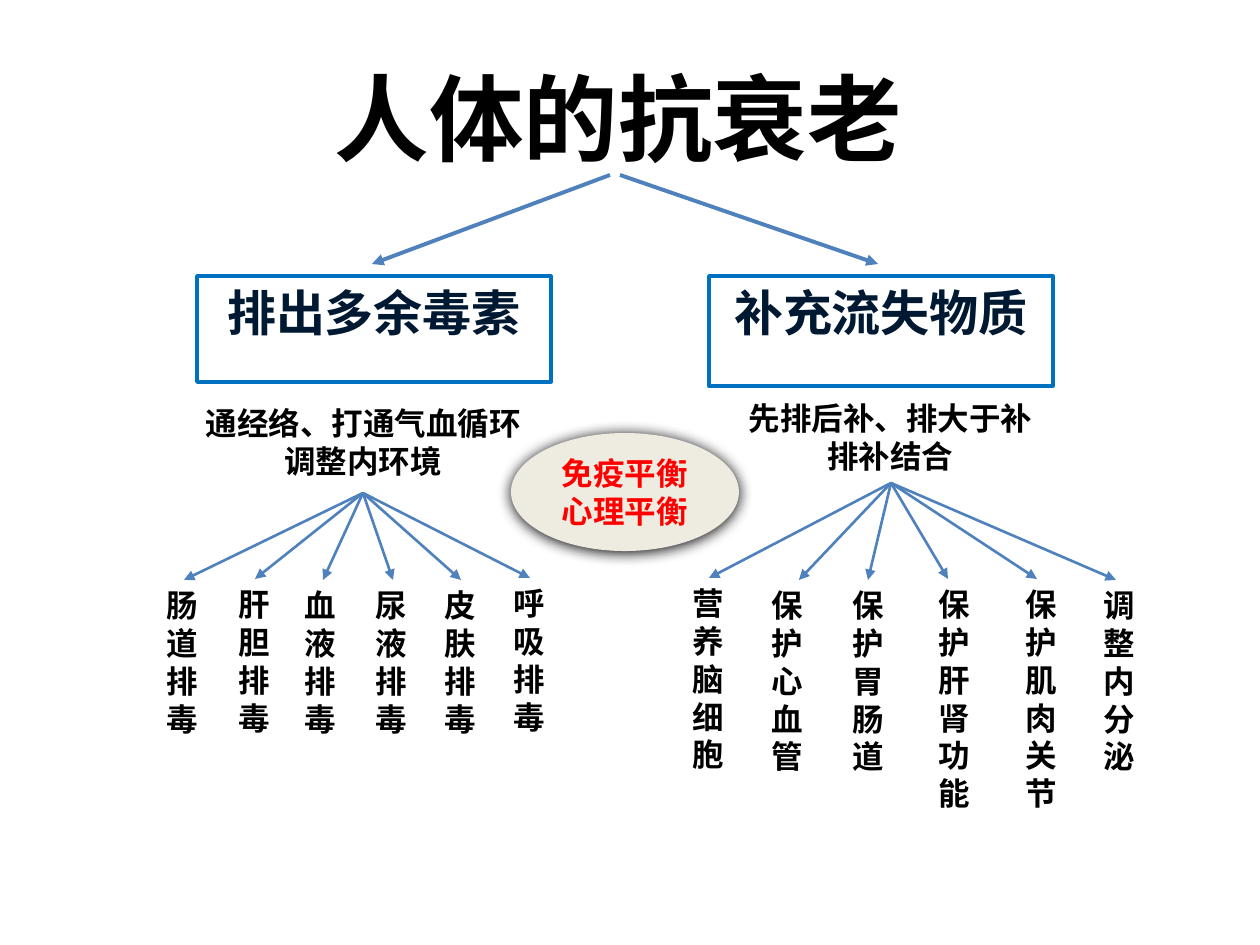
from dataclasses import dataclass

from lxml import etree
from pptx import Presentation
from pptx.dml.color import RGBColor
from pptx.enum.shapes import MSO_CONNECTOR, MSO_SHAPE
from pptx.enum.text import MSO_ANCHOR, PP_ALIGN
from pptx.oxml.ns import qn
from pptx.util import Emu, Pt

EMU_PER_PX = 914400 // 126
STRAIGHT = MSO_CONNECTOR.STRAIGHT
RECTANGLE, OVAL = MSO_SHAPE.RECTANGLE, MSO_SHAPE.OVAL
TOP, MIDDLE = MSO_ANCHOR.TOP, MSO_ANCHOR.MIDDLE
LEFT, CENTER = PP_ALIGN.LEFT, PP_ALIGN.CENTER

BLACK, RED, NAVY = "000000", "FF0000", "001932"
WHITE, CREAM, BORDER, ARROW = "FFFFFF", "EEECE1", "0070C0", "4F81BD"

BODY = {"name": "Arial", "size": Pt(18), "bold": True}
HEADING = {"name": "Calibri", "size": Pt(28), "bold": True}
TITLE = {"name": "Calibri", "size": Pt(54), "bold": True}

COLUMN_LINE, COLUMN_PADDING = 38, 14


@dataclass
class Box:
    left: int
    top: int
    width: int
    height: int


@dataclass
class Column:
    text: str
    left: int
    top: int
    width: int
    tip: int


@dataclass
class Branch:
    heading: str
    heading_box: Box
    summary: list[str]
    summary_box: Box
    origin: tuple[int, int]
    columns: list[Column]


BRANCHES = [
    Branch("排出多余毒素", Box(197, 276, 354, 106),
           ["通经络、打通气血循环 调整内环境"], Box(184, 398, 358, 126), (363, 493), [
               Column("肠道排毒", 154, 580, 59, 184),
               Column("肝胆排毒", 226, 579, 59, 255),
               Column("血液排毒", 292, 580, 59, 323),
               Column("尿液排毒", 363, 580, 59, 393),
               Column("皮肤排毒", 432, 580, 59, 461),
               Column("呼吸排毒", 501, 578, 59, 530)]),
    Branch("补充流失物质", Box(709, 276, 344, 110),
           ["先排后补、排大于补", "排补结合"], Box(689, 393, 403, 90), (891, 483), [
               Column("营养脑细胞", 680, 578, 59, 709),
               Column("保护心血管", 759, 580, 78, 799),
               Column("保护胃肠道", 840, 580, 81, 868),
               Column("保护肝肾功能", 926, 579, 69, 948),
               Column("保护肌肉关节", 1013, 579, 69, 1037),
               Column("调整内分泌", 1091, 580, 78, 1116)]),
]


def px(value: int) -> Emu:
    return Emu(value * EMU_PER_PX)


def colour(value: str) -> RGBColor:
    return RGBColor.from_string(value)


def bounds(box: Box) -> list[Emu]:
    return [px(value) for value in (box.left, box.top, box.width, box.height)]


def write(shape, lines: list[str], font: dict, hex_colour: str,
          alignment=CENTER, anchor=TOP, wrap: bool = True) -> None:
    frame = shape.text_frame
    frame.word_wrap = wrap
    frame.vertical_anchor = anchor
    for index, line in enumerate(lines):
        paragraph = frame.add_paragraph() if index else frame.paragraphs[0]
        paragraph.alignment = alignment
        run = paragraph.add_run()
        run.text = line
        for name, value in font.items():
            setattr(run.font, name, value)
        run.font.color.rgb = colour(hex_colour)


def add_text(slide, box: Box, lines: list[str], font: dict, **options):
    shape = slide.shapes.add_textbox(*bounds(box))
    write(shape, lines, font, BLACK, **options)
    return shape


def add_panel(slide, kind, box: Box, fill: str, border: str | None = None):
    shape = slide.shapes.add_shape(kind, *bounds(box))
    shape.shadow.inherit = False
    shape.fill.solid()
    shape.fill.fore_color.rgb = colour(fill)
    if border:
        shape.line.color.rgb = colour(border)
        shape.line.width = Pt(2)
    else:
        shape.line.fill.background()
    return shape


def add_shadow(shape) -> None:
    effects = shape.element.spPr.find(qn("a:effectLst"))
    shadow = etree.SubElement(effects, qn("a:outerShdw"), blurRad=str(Pt(8.5)),
                              dist=str(Pt(1)), dir="5400000", rotWithShape="0")
    etree.SubElement(shadow, qn("a:srgbClr"), val=BLACK)


def add_arrow(slide, start: tuple[int, int], end: tuple[int, int], width: float) -> None:
    arrow = slide.shapes.add_connector(STRAIGHT, *map(px, start + end))
    arrow.line.color.rgb = colour(ARROW)
    arrow.line.width = Pt(width)
    etree.SubElement(arrow.line._get_or_add_ln(), qn("a:tailEnd"), type="triangle")
    etree.SubElement(arrow.element.spPr, qn("a:effectLst"))


def add_branch(slide, branch: Branch) -> None:
    panel = add_panel(slide, RECTANGLE, branch.heading_box, WHITE, BORDER)
    write(panel, [branch.heading], HEADING, NAVY)
    add_text(slide, branch.summary_box, branch.summary, BODY)
    for column in branch.columns:
        # The narrow box wraps after every character
        height = COLUMN_LINE * len(column.text) + COLUMN_PADDING
        box = Box(column.left, column.top, column.width, height)
        add_text(slide, box, [column.text], BODY, alignment=LEFT)
        add_arrow(slide, branch.origin, (column.tip, column.top), 1.5)


def main() -> None:
    presentation = Presentation()
    presentation.slide_width, presentation.slide_height = px(1260), px(945)
    slide = presentation.slides.add_slide(presentation.slide_layouts[6])

    # Title, set right of the middle of its box
    title = add_text(slide, Box(33, 26, 1082, 181), ["人体的抗衰老"], TITLE, anchor=MIDDLE)
    title.text_frame.margin_left = px(101)

    # Two branches with their columns
    for branch in BRANCHES:
        add_branch(slide, branch)
    add_arrow(slide, (610, 175), (372, 264), 2.25)
    add_arrow(slide, (620, 175), (878, 264), 2.25)

    # Balance in the centre
    balance = add_panel(slide, OVAL, Box(511, 433, 228, 118), CREAM)
    add_shadow(balance)
    write(balance, ["免疫平衡", "心理平衡"], BODY, RED, anchor=MIDDLE, wrap=False)

    presentation.save("out.pptx")


if __name__ == "__main__":
    main()
